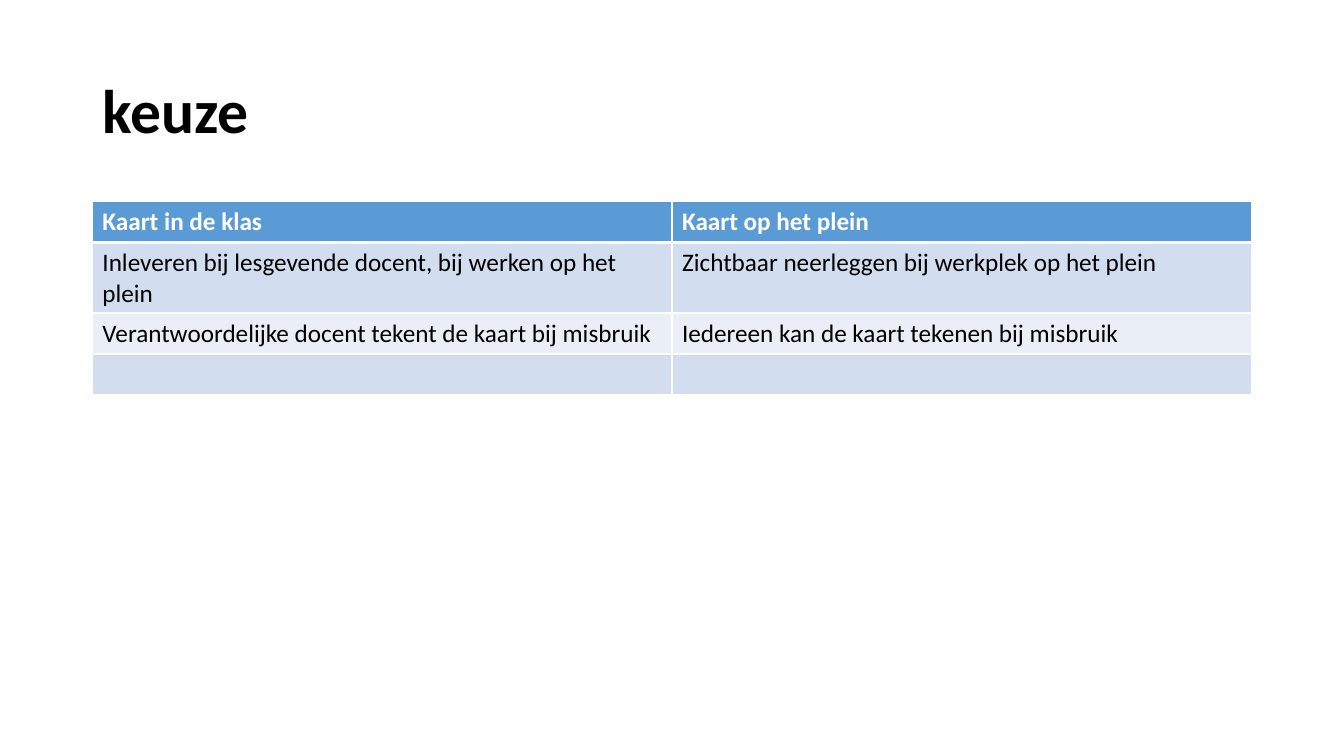
from dataclasses import dataclass

import lxml.etree
import pptx
import pptx.dml.color
import pptx.enum.text
import pptx.oxml.ns
import pptx.util

COLORS = {
    "white": "FFFFFF",
    "black": "000000",
    "header": "5B9BD5",
    "band_dark": "D2DEEF",
    "band_light": "EAEFF7",
}
FONT = "Calibri"
LEFT, WIDTH = 66, 828
TABLE_TOP, ROW_HEIGHT = 144, 29.2
THIN, THICK = 1, 3


@dataclass
class TableRow:
    texts: tuple[str, str]
    fill: str
    color: str = "black"
    bold: bool = False
    top: float = THIN
    bottom: float = THIN


ROWS = [
    TableRow(("Kaart in de klas", "Kaart op het plein"), "header", "white", True, bottom=THICK),
    TableRow(
        (
            "Inleveren bij lesgevende docent, bij werken op het plein",
            "Zichtbaar neerleggen bij werkplek op het plein",
        ),
        "band_dark",
        top=THICK,
    ),
    TableRow(
        (
            "Verantwoordelijke docent tekent de kaart bij misbruik",
            "Iedereen kan de kaart tekenen bij misbruik",
        ),
        "band_light",
    ),
    TableRow(("", ""), "band_dark"),
]


def rgb(name: str) -> pptx.dml.color.RGBColor:
    return pptx.dml.color.RGBColor.from_string(COLORS[name])


def format_text(paragraph, size: float, color: str, bold: bool) -> None:
    for item in (paragraph, *paragraph.runs):
        item.font.name = FONT
        item.font.size = pptx.util.Pt(size)
        item.font.bold = bold
        item.font.color.rgb = rgb(color)


def add_borders(cell, top: float, bottom: float) -> None:
    properties = cell._tc.get_or_add_tcPr()
    sides = {"lnL": THIN, "lnR": THIN, "lnT": top, "lnB": bottom}
    for index, (side, width) in enumerate(sides.items()):
        line = lxml.etree.Element(pptx.oxml.ns.qn(f"a:{side}"), w=str(pptx.util.Pt(width)))
        fill = lxml.etree.SubElement(line, pptx.oxml.ns.qn("a:solidFill"))
        lxml.etree.SubElement(fill, pptx.oxml.ns.qn("a:srgbClr"), val=COLORS["white"])
        properties.insert(index, line)


def add_title(slide, text: str) -> None:
    shape = slide.shapes.add_textbox(
        pptx.util.Pt(LEFT), pptx.util.Pt(28.8), pptx.util.Pt(WIDTH), pptx.util.Pt(104.4)
    )
    text_frame = shape.text_frame
    text_frame.word_wrap = True
    text_frame.vertical_anchor = pptx.enum.text.MSO_ANCHOR.MIDDLE
    text_frame.text = text
    paragraph = text_frame.paragraphs[0]
    paragraph.line_spacing = 0.9
    format_text(paragraph, 44, "black", True)


def add_choice_table(slide, rows: list[TableRow]) -> None:
    table = slide.shapes.add_table(
        len(rows),
        len(rows[0].texts),
        pptx.util.Pt(LEFT),
        pptx.util.Pt(TABLE_TOP),
        pptx.util.Pt(WIDTH),
        pptx.util.Pt(ROW_HEIGHT * len(rows)),
    ).table
    for row_index, row in enumerate(rows):
        for column_index, text in enumerate(row.texts):
            cell = table.cell(row_index, column_index)
            cell.fill.solid()
            cell.fill.fore_color.rgb = rgb(row.fill)
            add_borders(cell, row.top, row.bottom)
            cell.text_frame.text = text
            format_text(cell.text_frame.paragraphs[0], 18, row.color, row.bold)


def main() -> None:
    presentation = pptx.Presentation()
    presentation.slide_width = pptx.util.Pt(960)
    presentation.slide_height = pptx.util.Pt(540)
    slide = presentation.slides.add_slide(presentation.slide_layouts[6])

    # Title
    add_title(slide, "keuze")

    # Comparison of the two options
    add_choice_table(slide, ROWS)

    presentation.save("out.pptx")


if __name__ == "__main__":
    main()
